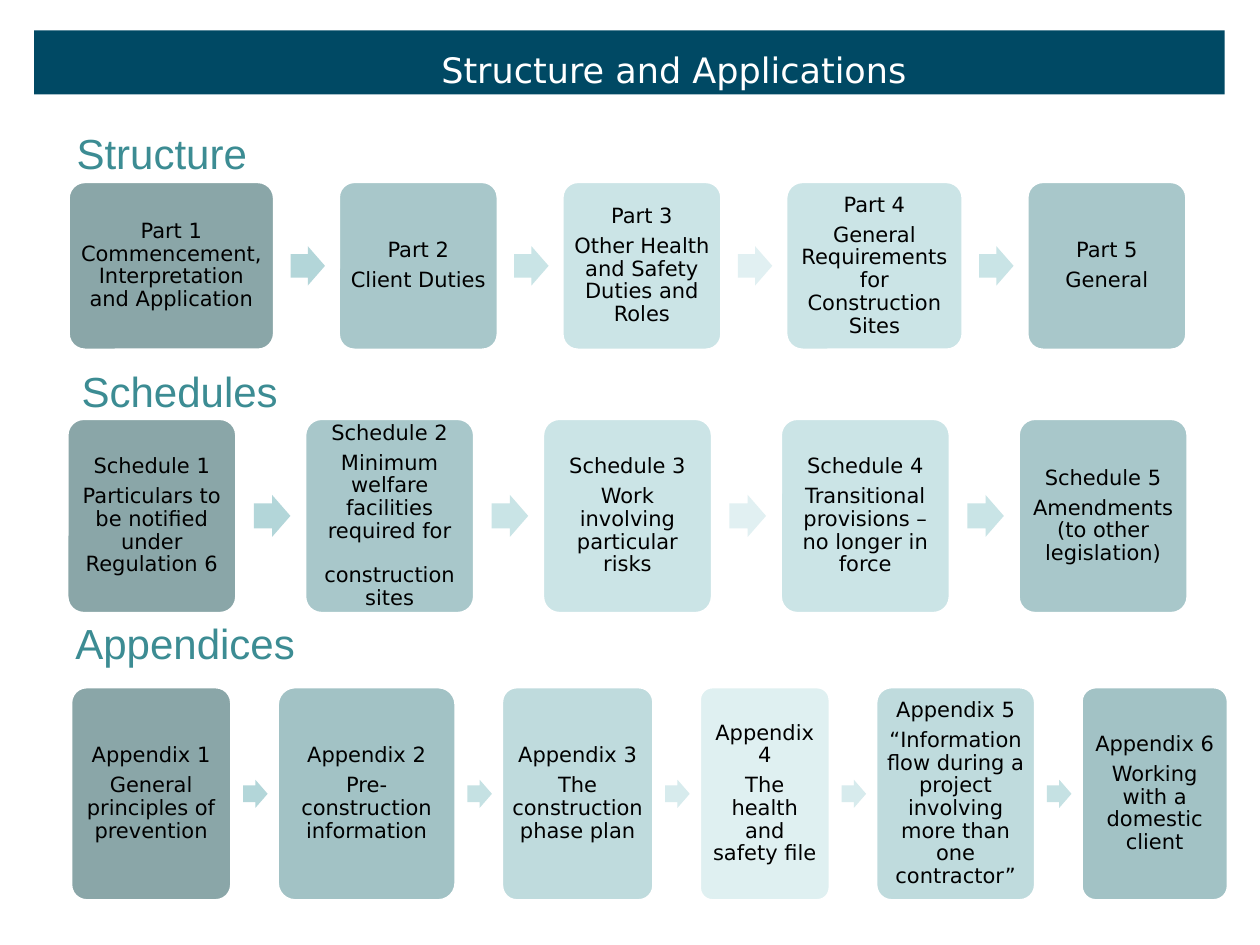
from pptx import Presentation
from pptx import util as u
from pptx.dml.color import RGBColor
from pptx.enum import shapes, text

COLORS = {
    "banner": "004964", "heading": "3C8C93", "white": "FFFFFF", "black": "000000",
    "slate": "8AA6A8", "teal": "A8C7CA", "pale": "CBE4E6",
    "sea": "A2C2C5", "mist": "BFDBDD", "ice": "DFF0F1",
    "arrow1": "B3D6D9", "arrow2": "C9E4E6", "arrow3": "E1F0F2",
    "arrow4": "C5E1E3", "arrow5": "D7EBED",
}
BODY_FONT, HEADING_FONT = "DejaVu Sans", "Arial"
FIVE_CARDS = ["slate", "teal", "pale", "pale", "teal"]
FIVE_ARROWS = ["arrow1", "arrow2", "arrow3", "arrow2"]
SIX_CARDS = ["slate", "sea", "mist", "ice", "mist", "sea"]
SIX_ARROWS = ["arrow1", "arrow4", "arrow5", "arrow5", "arrow4"]

# Each card: width in inches, then its paragraphs
PARTS = [
    (1.64, ["Part 1 Commencement, Interpretation and Application"]),
    (1.27, ["Part 2", "Client Duties"]),
    (1.27, ["Part 3", "Other Health and Safety Duties and Roles"]),
    (1.41, ["Part 4", "General Requirements for Construction Sites"]),
    (1.27, ["Part 5", "General"]),
]
SCHEDULES = [
    (1.35, ["Schedule 1", "Particulars to be notified under Regulation 6"]),
    (1.35, ["Schedule 2", "Minimum welfare facilities required for",
            "construction sites"]),
    (1.35, ["Schedule 3", "Work involving particular risks"]),
    (1.35, ["Schedule 4", "Transitional provisions – no longer in force"]),
    (1.35, ["Schedule 5", "Amendments (to other legislation)"]),
]
APPENDICES = [
    (1.28, ["Appendix 1", "General principles of prevention"]),
    (1.42, ["Appendix 2", "Pre-construction information"]),
    (1.21, ["Appendix 3", "The construction phase plan"]),
    (1.04, ["Appendix 4", "The health and safety file"]),
    (1.27, ["Appendix 5", "“Information flow during a project involving "
                          "more than one contractor”"]),
    (1.17, ["Appendix 6", "Working with a domestic client"]),
]


def rgb(name):
    return RGBColor.from_string(COLORS[name])


def style_runs(paragraph, font, size, color):
    for run in paragraph.runs:
        run.font.name = font
        run.font.size = u.Pt(size)
        run.font.color.rgb = rgb(color)


def add_block(parent, preset, box, fill):
    """Add a flat, unoutlined preset shape."""
    block = parent.add_shape(preset, *map(u.Inches, box))
    block.shadow.inherit = False
    block.fill.solid()
    block.fill.fore_color.rgb = rgb(fill)
    block.line.fill.background()
    return block


def add_label(slide, box, words, font, size, color):
    label = slide.shapes.add_textbox(*map(u.Inches, box))
    frame = label.text_frame
    frame.word_wrap = True
    frame.text = words
    style_runs(frame.paragraphs[0], font, size, color)
    return frame


def add_banner(slide, left, top, width, height):
    add_block(slide.shapes, shapes.MSO_SHAPE.RECTANGLE,
              (left, top, width, height), "banner")
    title = add_label(slide, (left + 0.67, top - 0.09, 8.82, 0.61),
                      "Structure and Applications", BODY_FONT, 20, "white")
    title.vertical_anchor = text.MSO_ANCHOR.BOTTOM
    title.paragraphs[0].alignment = text.PP_ALIGN.CENTER
    title.paragraphs[0].line_spacing = 0.75


def add_card(parent, box, fill, lines):
    card = add_block(parent, shapes.MSO_SHAPE.ROUNDED_RECTANGLE, box, fill)
    card.adjustments[0] = 0.1
    card.line.color.rgb = rgb("white")
    card.line.width = u.Pt(2)
    frame = card.text_frame
    frame.word_wrap = True
    frame.vertical_anchor = text.MSO_ANCHOR.MIDDLE
    frame.margin_left = frame.margin_right = u.Inches(0.05)
    frame.margin_top = frame.margin_bottom = u.Inches(0.05)
    frame.text = "\n".join(lines)
    for index, paragraph in enumerate(frame.paragraphs):
        paragraph.alignment = text.PP_ALIGN.CENTER
        paragraph.line_spacing = 0.9
        # A third line is set one blank line below the second
        wide_gap = 0 < index < len(lines) - 1
        paragraph.space_after = u.Pt(12.6 if wide_gap else 4.2)
        style_runs(paragraph, BODY_FONT, 12, "black")


def add_flow(slide, left, top, width, height, cards, fills, arrow_fills):
    """Spread the cards over the width, with an arrow in every gap."""
    flow = slide.shapes.add_group_shape().shapes
    gap = (width - sum(card[0] for card in cards)) / (len(cards) - 1)
    arrow_width, arrow_height = gap * 0.54, gap * 0.62
    x = left
    for index, (card_width, lines) in enumerate(cards):
        add_card(flow, (x, top, card_width, height), fills[index], lines)
        x += card_width
        if index < len(arrow_fills):
            arrow = add_block(flow, shapes.MSO_SHAPE.RIGHT_ARROW,
                              (x + gap / 4, top + (height - arrow_height) / 2,
                               arrow_width, arrow_height), arrow_fills[index])
            arrow.adjustments[0] = 0.6
            arrow.adjustments[1] = 0.5
        x += gap


def main():
    deck = Presentation()
    deck.slide_width, deck.slide_height = u.Inches(10), u.Inches(7.5)
    slide = deck.slides.add_slide(deck.slide_layouts[6])

    add_banner(slide, 0.27, 0.24, 9.45, 0.51)

    # Section headings
    for words, left, top in [("Structure", 0.51, 0.96), ("Schedules", 0.55, 2.85),
                             ("Appendices", 0.5, 4.85)]:
        add_label(slide, (left, top, 2, 0.51), words, HEADING_FONT, 24, "heading")

    # Card flows
    add_flow(slide, 0.54, 1.44, 8.88, 1.34, PARTS, FIVE_CARDS, FIVE_ARROWS)
    add_flow(slide, 0.53, 3.32, 8.9, 1.55, SCHEDULES, FIVE_CARDS, FIVE_ARROWS)
    add_flow(slide, 0.56, 5.45, 9.19, 1.7, APPENDICES, SIX_CARDS, SIX_ARROWS)

    deck.save("out.pptx")


if __name__ == "__main__":
    main()
